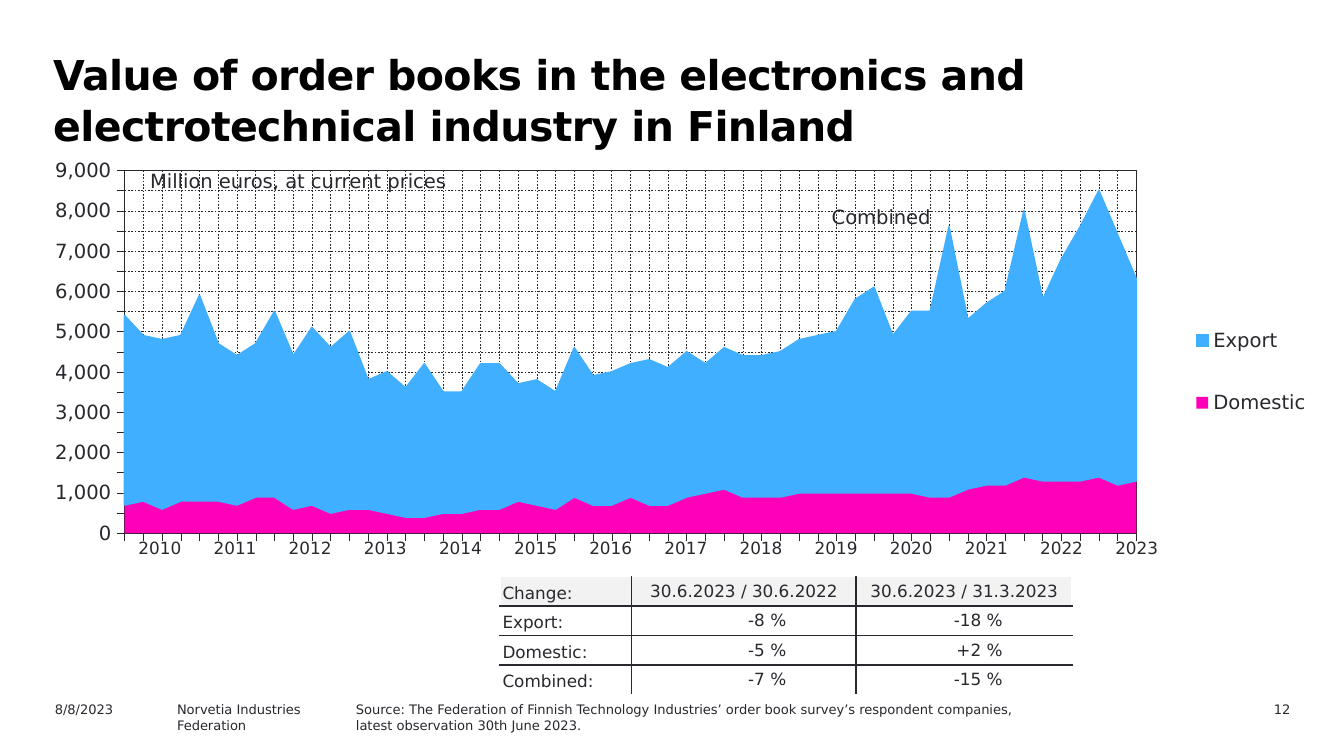
import pptx
import pptx.chart.data
import pptx.dml.color
import pptx.enum.chart
import pptx.enum.dml
import pptx.enum.text
import pptx.oxml
import pptx.oxml.ns
import pptx.util

Pt = pptx.util.Pt
qn = pptx.oxml.ns.qn
ALIGN = pptx.enum.text.PP_ALIGN
ANCHOR = pptx.enum.text.MSO_ANCHOR

# Content
INK, WHITE, SHADE = "29282E", "FFFFFF", "F2F2F2"
FONT = "DejaVu Sans"
TITLE = "Value of order books in the electronics and electrotechnical industry in Finland"
SOURCE = ("Source: The Federation of Finnish Technology Industries’ order book survey’s "
          "respondent companies, latest observation 30th June 2023.")

DOMESTIC = [700, 800, 600, 800, 800, 800, 700, 900, 900, 600, 700, 500, 600, 600,
            500, 400, 400, 500, 500, 600, 600, 800, 700, 600, 900, 700, 700, 900,
            700, 700, 900, 1000, 1100, 900, 900, 900, 1000, 1000, 1000, 1000, 1000,
            1000, 1000, 900, 900, 1100, 1200, 1200, 1400, 1300, 1300, 1300, 1400,
            1200, 1300]
EXPORT = [4700, 4100, 4200, 4100, 5100, 3900, 3700, 3800, 4600, 3800, 4400, 4100,
          4400, 3200, 3500, 3200, 3800, 3000, 3000, 3600, 3600, 2900, 3100, 2900,
          3700, 3200, 3300, 3300, 3600, 3400, 3600, 3200, 3500, 3500, 3500, 3600,
          3800, 3900, 4000, 4800, 5100, 3900, 4500, 4600, 6700, 4200, 4500, 4800,
          6600, 4500, 5500, 6300, 7100, 6200, 5000]
SERIES = [("Domestic", DOMESTIC, "FF00B8"), ("Export", EXPORT, "40AFFF")]

CHANGES = [
    ("Change:", "30.6.2023 / 30.6.2022", "30.6.2023 / 31.3.2023"),
    ("Export:", "-8 %", "-18 %"),
    ("Domestic:", "-5 %", "+2 %"),
    ("Combined:", "-7 %", "-15 %"),
]
YEARS = [str(year) for year in range(2010, 2024)]

# Text boxes: paragraphs, (left, top, width, height), size, alignment
FOOT = 372.2
LABELS = [
    (["Million euros, at current prices"], (73.4, 87.1, 177, 19.4), 10.5, ALIGN.LEFT),
    (["Combined"], (438.5, 106.2, 78, 19.4), 10.5, ALIGN.LEFT),
    (["8/8/2023"], (22.3, FOOT, 72, 13), 7, ALIGN.LEFT),
    (["Norvetia Industries", "Federation"], (87.8, FOOT, 129.6, 13), 7, ALIGN.LEFT),
    ([SOURCE], (183.6, FOOT, 380.2, 18.7), 7, ALIGN.LEFT),
    (["12"], (630.7, FOOT, 67.7, 13), 7, ALIGN.RIGHT),
]


def rgb(code):
    return pptx.dml.color.RGBColor.from_string(code)


def style(font, size, color=INK, bold=False):
    font.name, font.size, font.bold = FONT, Pt(size), bold
    font.color.rgb = rgb(color)


def write(tf, text, size, color=INK, bold=False, align=ALIGN.LEFT, first=True):
    p = tf.paragraphs[0] if first else tf.add_paragraph()
    p.alignment = align
    r = p.add_run()
    r.text = text
    style(r.font, size, color, bold)
    return p


def outline(line, color, width, dash=None):
    line.color.rgb = rgb(color)
    line.width = Pt(width)
    if dash:
        line.dash_style = dash


def set_layout(parent, index, x, y, w, h, inner=False):
    for old in parent.findall(qn("c:layout")):
        parent.remove(old)
    target = '<c:layoutTarget val="inner"/>' if inner else ""
    parent.insert(index, pptx.oxml.parse_xml(
        f'<c:layout {pptx.oxml.ns.nsdecls("c")}><c:manualLayout>{target}'
        '<c:xMode val="edge"/><c:yMode val="edge"/>'
        f'<c:x val="{x}"/><c:y val="{y}"/><c:w val="{w}"/><c:h val="{h}"/>'
        '</c:manualLayout></c:layout>'))


def line_xml(tag, color, width):
    return pptx.oxml.parse_xml(
        f'<a:{tag} {pptx.oxml.ns.nsdecls("a")} w="{Pt(width)}"><a:solidFill>'
        f'<a:srgbClr val="{color}"/></a:solidFill></a:{tag}>')


def add_table(s, left, top, widths, heights):
    frame = s.shapes.add_table(len(heights), len(widths), Pt(left), Pt(top),
                               Pt(sum(widths)), Pt(sum(heights)))
    table = frame.table
    table.first_row = table.horz_banding = False
    # Plain table style without grid
    style_id = table._tbl.tblPr.find(qn("a:tableStyleId"))
    style_id.text = "{2D5ABB26-0587-4C30-8999-92F81FD0307C}"
    for column, width in zip(table.columns, widths):
        column.width = Pt(width)
    for row, height in zip(table.rows, heights):
        row.height = Pt(height)
    return table


def set_margins(cell, left, top, right, bottom):
    cell.margin_left, cell.margin_top = Pt(left), Pt(top)
    cell.margin_right, cell.margin_bottom = Pt(right), Pt(bottom)


prs = pptx.Presentation()
prs.slide_width, prs.slide_height = Pt(720), Pt(405)
s = prs.slides.add_slide(prs.slide_layouts[5])

# Title
title = s.shapes.title
title.left, title.top, title.width, title.height = Pt(21.3), Pt(22.3), Pt(628), Pt(51)
tf = title.text_frame
tf.word_wrap = True
tf.auto_size = pptx.enum.text.MSO_AUTO_SIZE.NONE
tf.vertical_anchor = ANCHOR.TOP
p = write(tf, TITLE, 22, "000000", bold=True)
p.line_spacing = Pt(27)
p.runs[0].font._element.set("spc", "-30")

# Stacked area chart
data = pptx.chart.data.CategoryChartData()
data.categories = [str(n) for n in range(1, len(DOMESTIC) + 1)]
for name, values, _ in SERIES:
    data.add_series(name, values)
chart = s.shapes.add_chart(pptx.enum.chart.XL_CHART_TYPE.AREA_STACKED, Pt(14.4), Pt(85),
                           Pt(697.7), Pt(219.6), data).chart
chart.has_title = False
style(chart.font, 10.5)
plot = chart.plots[0]
plot.vary_by_categories = False
for series, (_, _, color) in zip(plot.series, SERIES):
    series.format.fill.solid()
    series.format.fill.fore_color.rgb = rgb(color)
outline(plot.series[1].format.line, SERIES[1][2], 0.88)

# Axes, grid and plot frame
for axis in (chart.category_axis, chart.value_axis):
    axis.has_major_gridlines = True
    outline(axis.major_gridlines.format.line, INK, 0.25, pptx.enum.dml.MSO_LINE.DASH)
    outline(axis.format.line, INK, 0.22)
    axis.major_tick_mark = pptx.enum.chart.XL_TICK_MARK.OUTSIDE
    axis.minor_tick_mark = pptx.enum.chart.XL_TICK_MARK.NONE
    style(axis.tick_labels.font, 10.5)
chart.category_axis.tick_label_position = pptx.enum.chart.XL_TICK_LABEL_POSITION.NONE
axis = chart.value_axis
axis.minimum_scale, axis.maximum_scale, axis.major_unit = 0, 9000, 500
axis.tick_labels.number_format = "#,##0"
axis.tick_labels.number_format_is_linked = False
axis._element.find(qn("c:crossBetween")).set("val", "midCat")
area = chart._chartSpace.chart.plotArea
set_layout(area, 0, 0.075, 0.029, 0.777, 0.885, inner=True)
frame = pptx.oxml.parse_xml(f'<c:spPr {pptx.oxml.ns.nsdecls("c", "a")}><a:noFill/></c:spPr>')
frame.append(line_xml("ln", INK, 0.88))
area.append(frame)

# Legend
chart.has_legend = True
legend = chart.legend
legend.position = pptx.enum.chart.XL_LEGEND_POSITION.RIGHT
legend.include_in_layout = False
style(legend.font, 10.5)
set_layout(legend._element, 1, 0.88, 0.32, 0.12, 0.4)

# Labels and footer
for lines, box, size, align in LABELS:
    tf = s.shapes.add_textbox(*map(Pt, box)).text_frame
    tf.word_wrap = True
    for i, text in enumerate(lines):
        write(tf, text, size, align=align, first=i == 0)

# Change table: dark inner rules, white outer edges
table = add_table(s, 267.8, 308.9, [70.6, 120.2, 115.9], [15.84] * len(CHANGES))
last_row, last_col = len(CHANGES) - 1, len(CHANGES[0]) - 1
for i, row in enumerate(CHANGES):
    for j, text in enumerate(row):
        cell = table.cell(i, j)
        number = i > 0 and j > 0
        set_margins(cell, 1.44, 1.44, 37.4 if number else 1.44, 1.44)
        cell.vertical_anchor = ANCHOR.MIDDLE if j else ANCHOR.BOTTOM
        align = ALIGN.RIGHT if number else ALIGN.CENTER if j else ALIGN.LEFT
        write(cell.text_frame, text, 9, align=align)
        edges = {"lnL": j == 0, "lnR": j == last_col, "lnT": i == 0, "lnB": i == last_row}
        for tag, outer in edges.items():
            cell._tc.get_or_add_tcPr().append(line_xml(tag, WHITE if outer else INK, 1))
        cell.fill.solid()
        cell.fill.fore_color.rgb = rgb(WHITE if i else SHADE)

# Year row under the chart
table = add_table(s, 65.5, 285.1, [40.27] * len(YEARS), [22.3])
for cell, year in zip(table.rows[0].cells, YEARS):
    set_margins(cell, 7.2, 3.6, 7.2, 3.6)
    cell.fill.background()
    write(cell.text_frame, year, 9, align=ALIGN.CENTER)

prs.save("out.pptx")
